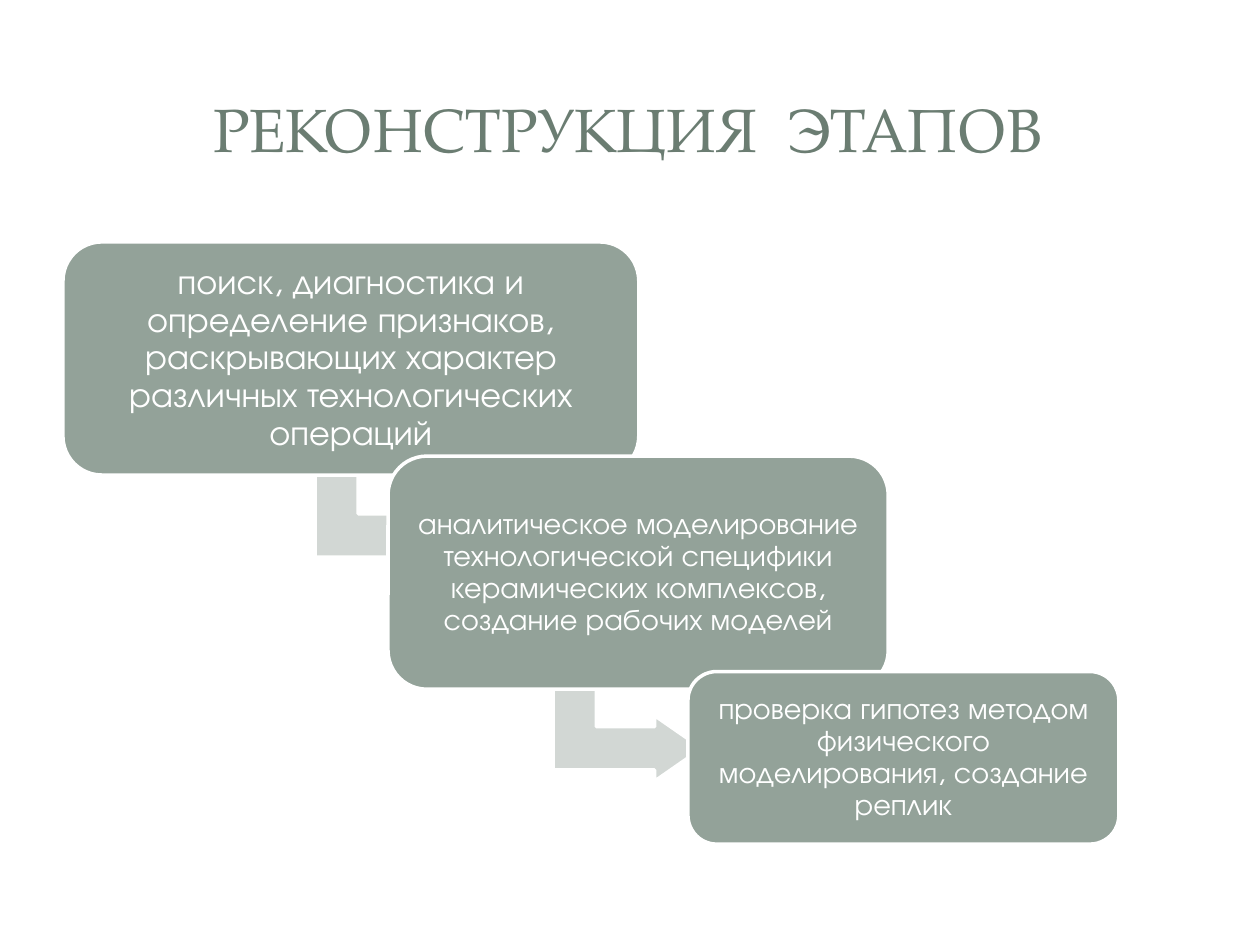
"""Build a slide with three stages of reconstruction as descending steps."""
import pptx
import pptx.dml.color
import pptx.enum.shapes
import pptx.enum.text
import pptx.util

Inches = pptx.util.Inches
Shape = pptx.enum.shapes.MSO_SHAPE

COLOURS = {"title": "6B7D72", "step": "93A299", "arrow": "D2D7D4", "white": "FFFFFF"}
TITLE_FONT = "TeX Gyre Pagella"
STEP_FONT = "TeX Gyre Adventor"

STEPS = [
    ("поиск, диагностика и определение признаков, раскрывающих характер "
     "различных технологических операций", (0.5, 1.92, 4.57, 1.85), 20, 0.08),
    ("аналитическое моделирование технологической специфики керамических "
     "комплексов, создание рабочих моделей", (3.08, 3.62, 3.97, 1.85), 17, 0.07),
    ("проверка гипотез методом физического моделирования, создание реплик",
     (5.46, 5.33, 3.42, 1.37), 17, 0.07),
]
ARROWS = [(2.57, 3.4), (4.46, 5.09)]


def colour(name):
    return pptx.dml.color.RGBColor.from_string(COLOURS[name])


def write(box, text, font, size, ink, inset, spacing=1.0):
    frame = box.text_frame
    frame.word_wrap = True
    frame.vertical_anchor = pptx.enum.text.MSO_ANCHOR.MIDDLE
    frame.margin_left = frame.margin_right = Inches(inset)
    frame.margin_top = frame.margin_bottom = Inches(inset)
    para = frame.paragraphs[0]
    para.alignment = pptx.enum.text.PP_ALIGN.CENTER
    para.line_spacing = spacing
    span = para.add_run()
    span.text = text
    span.font.name = font
    span.font.size = pptx.util.Pt(size)
    span.font.color.rgb = colour(ink)


def add_block(page, kind, place, fill, adjustments):
    block = page.shapes.add_shape(kind, *map(Inches, place))
    block.shadow.inherit = False
    block.fill.solid()
    block.fill.fore_color.rgb = colour(fill)
    block.line.color.rgb = colour("white")
    block.line.width = pptx.util.Pt(2)
    for index, value in enumerate(adjustments):
        block.adjustments[index] = value
    return block


def add_title(page, text):
    box = page.shapes.add_textbox(*map(Inches, (0.47, 0.45, 9.03, 1.14)))
    write(box, text, TITLE_FONT, 35, "title", 0.05)


def add_arrow(page, left, top):
    place = (left, top, 1.04, 1.18)
    arrow = add_block(page, Shape.BENT_UP_ARROW, place, "arrow", (0.33, 0.25, 0.36))
    arrow.rotation = 90


def add_step(page, text, place, size, inset):
    step = add_block(page, Shape.ROUNDED_RECTANGLE, place, "step", (0.167,))
    write(step, text, STEP_FONT, size, "white", inset, 0.9)


def main():
    deck = pptx.Presentation()
    deck.slide_width, deck.slide_height = Inches(10), Inches(7.5)
    page = deck.slides.add_slide(deck.slide_layouts[6])
    add_title(page, "РЕКОНСТРУКЦИЯ  ЭТАПОВ")
    for index, step in enumerate(STEPS):
        if index < len(ARROWS):
            add_arrow(page, *ARROWS[index])
        add_step(page, *step)
    deck.save("out.pptx")


if __name__ == "__main__":
    main()
